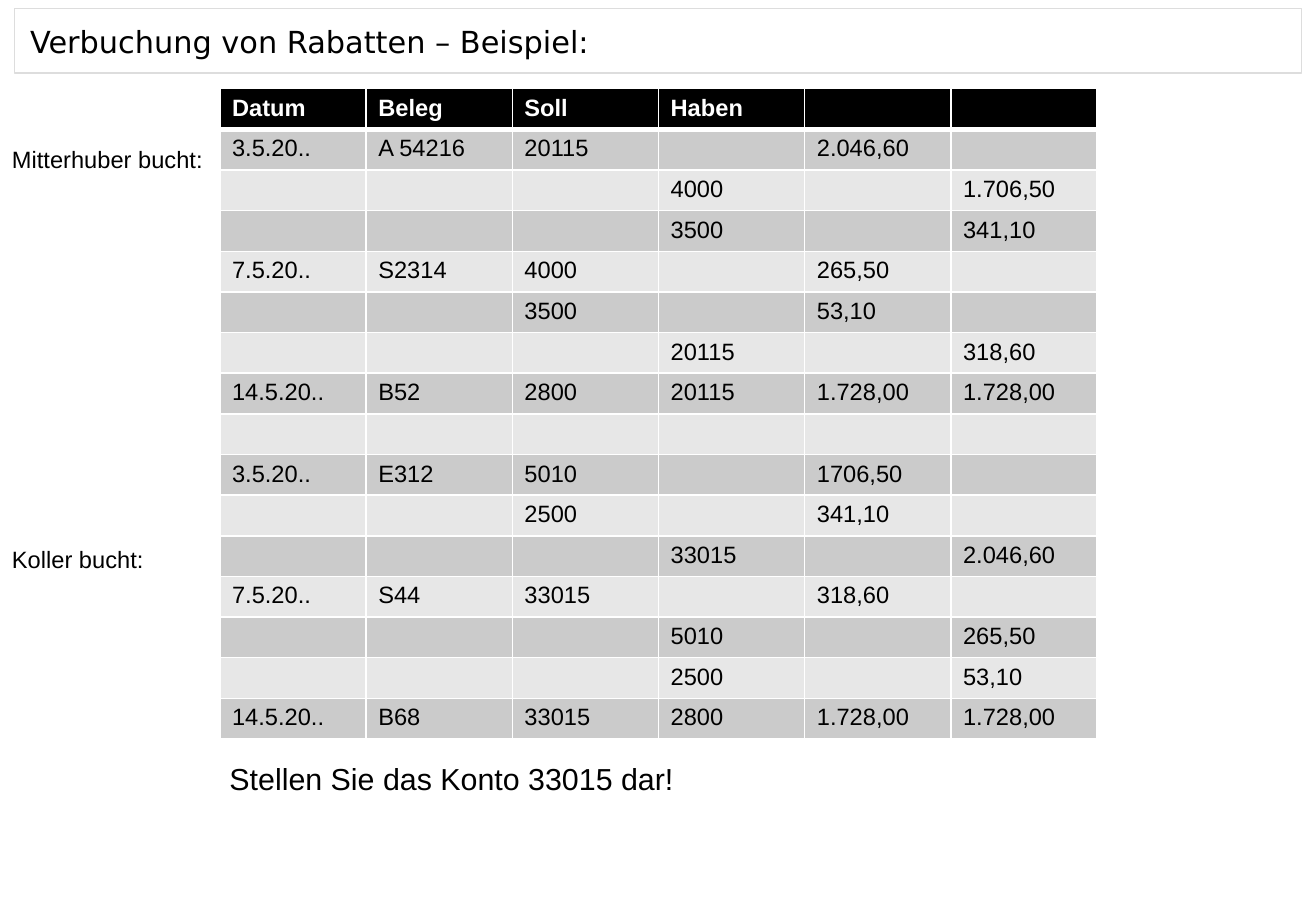
from dataclasses import dataclass

from lxml.etree import SubElement
from pptx import Presentation
from pptx.dml.color import RGBColor
from pptx.enum.shapes import MSO_SHAPE
from pptx.oxml.ns import qn
from pptx.util import Inches, Pt


@dataclass(frozen=True)
class Theme:
    ink: str = "000000"
    paper: str = "FFFFFF"
    frame: str = "DDDDDD"
    bands: tuple = ("CBCBCB", "E7E7E7")
    title_font: str = "DejaVu Sans"
    body_font: str = "Arial"
    large: int = 18
    small: int = 14
    thin: int = 1
    thick: int = 3


THEME = Theme()

HEADER = ("Datum", "Beleg", "Soll", "Haben", "", "")
BOOKINGS = (
    ("3.5.20..", "A 54216", "20115", "", "2.046,60", ""),
    ("", "", "", "4000", "", "1.706,50"),
    ("", "", "", "3500", "", "341,10"),
    ("7.5.20..", "S2314", "4000", "", "265,50", ""),
    ("", "", "3500", "", "53,10", ""),
    ("", "", "", "20115", "", "318,60"),
    ("14.5.20..", "B52", "2800", "20115", "1.728,00", "1.728,00"),
    ("", "", "", "", "", ""),
    ("3.5.20..", "E312", "5010", "", "1706,50", ""),
    ("", "", "2500", "", "341,10", ""),
    ("", "", "", "33015", "", "2.046,60"),
    ("7.5.20..", "S44", "33015", "", "318,60", ""),
    ("", "", "", "5010", "", "265,50"),
    ("", "", "", "2500", "", "53,10"),
    ("14.5.20..", "B68", "33015", "2800", "1.728,00", "1.728,00"),
)


def color(code):
    return RGBColor.from_string(code)


def add_label(page, box, text, size, font=THEME.body_font):
    """One unwrapped line of text."""
    frame = page.shapes.add_textbox(*map(Inches, box)).text_frame
    frame.word_wrap = False
    frame.text = text
    span = frame.paragraphs[0].runs[0]
    span.font.name = font
    span.font.size = Pt(size)
    span.font.color.rgb = color(THEME.ink)


def add_title(page, box):
    """Framed title bar with the heading inside it."""
    left, top, width, height = box
    bar = page.shapes.add_shape(MSO_SHAPE.RECTANGLE, *map(Inches, box))
    bar.shadow.inherit = False
    bar.fill.background()
    bar.line.color.rgb = color(THEME.frame)
    bar.line.width = Pt(THEME.thin)
    add_label(page, (left + 0.03, top + 0.07, 4.86, 0.4),
              "Verbuchung von Rabatten – Beispiel:", THEME.large, THEME.title_font)


def set_borders(cell, top, bottom):
    properties = cell._tc.get_or_add_tcPr()
    widths = {"lnL": THEME.thin, "lnR": THEME.thin, "lnT": top, "lnB": bottom}
    for side, width in widths.items():
        line = SubElement(properties, qn(f"a:{side}"), w=str(Pt(width)))
        fill = SubElement(line, qn("a:solidFill"))
        SubElement(fill, qn("a:srgbClr"), val=THEME.paper)


def fill_cell(cell, text, row):
    is_header = row == 0
    set_borders(cell, THEME.thick if row == 1 else THEME.thin,
                THEME.thick if is_header else THEME.thin)
    cell.fill.solid()
    cell.fill.fore_color.rgb = color(THEME.ink if is_header else THEME.bands[(row - 1) % 2])
    cell.text = text
    para = cell.text_frame.paragraphs[0]
    for span in para.runs:
        span.font.name = THEME.body_font
        span.font.size = Pt(THEME.small)
        span.font.bold = is_header
        span.font.color.rgb = color(THEME.paper if is_header else THEME.ink)
    # Empty cells need the small size too, or their rows grow
    if not text:
        SubElement(para._p, qn("a:endParaRPr"), sz=str(THEME.small * 100))


def add_journal(page, box):
    """Booking table with equal rows and columns."""
    width, height = box[2:]
    rows = (HEADER, *BOOKINGS)
    table = page.shapes.add_table(len(rows), len(HEADER), *map(Inches, box)).table
    for column in table.columns:
        column.width = Inches(width / len(HEADER))
    for row, texts in enumerate(rows):
        table.rows[row].height = Inches(height / len(rows))
        for column, text in enumerate(texts):
            fill_cell(table.cell(row, column), text, row)


def main():
    deck = Presentation()
    deck.slide_width, deck.slide_height = Inches(10.83), Inches(7.5)
    page = deck.slides.add_slide(deck.slide_layouts[6])

    add_title(page, (0.12, 0.07, 10.59, 0.53))
    add_journal(page, (1.81, 0.73, 7.22, 5.36))

    # Who books, beside the table
    add_label(page, (0, 1.14, 1.78, 0.34), "Mitterhuber bucht:", THEME.small)
    add_label(page, (0, 4.44, 1.29, 0.34), "Koller bucht:", THEME.small)

    # Task below the table
    add_label(page, (1.79, 6.21, 3.89, 0.4), "Stellen Sie das Konto 33015 dar!", THEME.large)

    deck.save("out.pptx")


if __name__ == "__main__":
    main()
